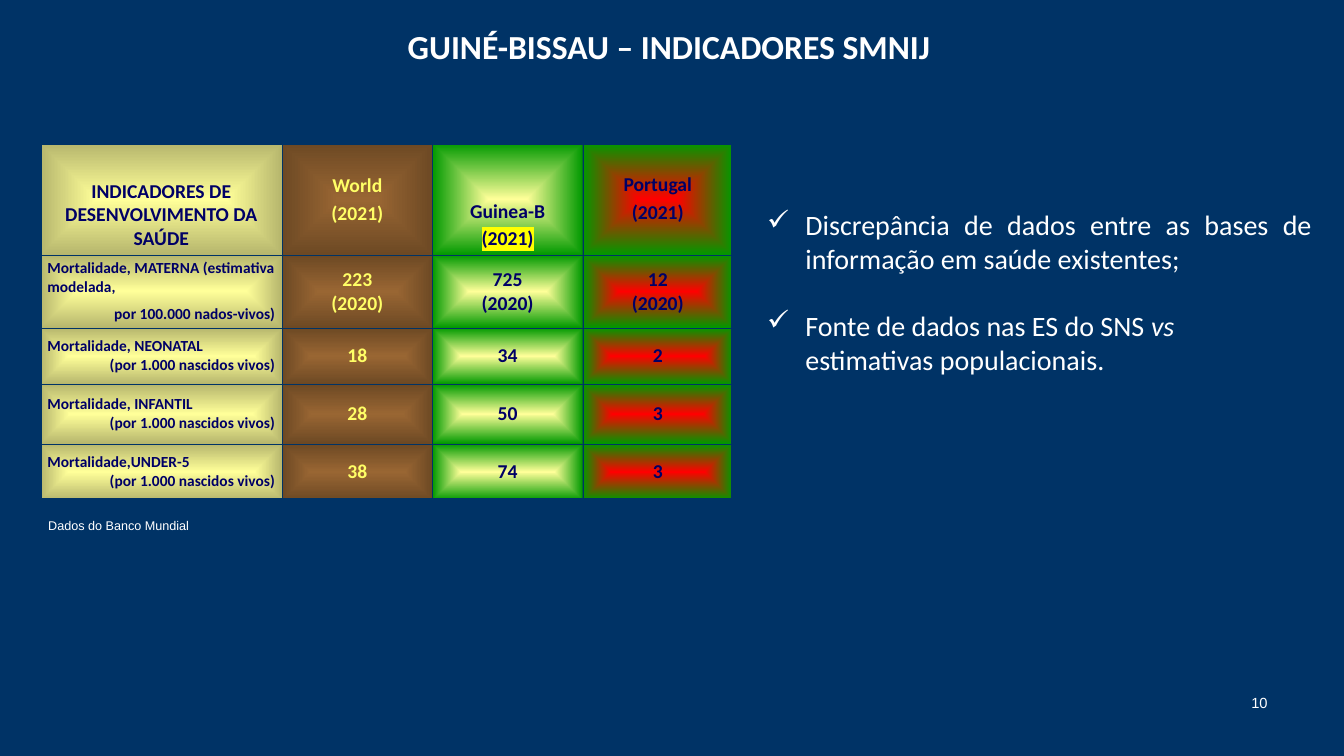
from dataclasses import dataclass

import pptx
import pptx.dml.color
import pptx.enum.text
import pptx.oxml
import pptx.oxml.ns
import pptx.util
from pptx.util import Inches

ALIGN = pptx.enum.text.PP_ALIGN
ANCHOR = pptx.enum.text.MSO_ANCHOR
NAMESPACE = pptx.oxml.ns.nsdecls("a")


@dataclass(frozen=True)
class Theme:
    background: str = "003366"
    white: str = "FFFFFF"
    navy: str = "000066"
    pale_yellow: str = "FFFF66"
    highlight: str = "FFFF00"
    body_font: str = "Calibri"
    small_font: str = "Arial"
    title_size: float = 24
    bullet_size: float = 20
    value_size: float = 14
    label_size: float = 11
    number_size: float = 10.5
    caption_size: float = 9
    outer_border: float = 3
    inner_border: float = 0.25


THEME = Theme()


@dataclass(frozen=True)
class Line:
    text: str
    size: float
    color: str = THEME.white
    font: str = THEME.body_font
    bold: bool = False
    align: ALIGN = ALIGN.LEFT
    before: float = 0
    highlight: str = ""
    bullet: str = ""
    italic_word: str = ""
    ending: str = ""


@dataclass(frozen=True)
class TextBox:
    left: float
    top: float
    width: float
    height: float
    lines: tuple[Line, ...]
    margin_top: float = 0.05


@dataclass(frozen=True)
class Column:
    width: float
    center: str
    edge: str
    text: str
    header: tuple[str, ...]
    anchor: ANCHOR = ANCHOR.BOTTOM
    margin_bottom: float = 0.04
    highlight: str = ""


@dataclass(frozen=True)
class Indicator:
    height: float
    name: str
    unit: str
    values: tuple[str, ...]
    year: str = ""
    unit_gap: float = 0


COLUMNS = (
    Column(2.4, "FFFF99", "B6B66D", THEME.navy, ("INDICADORES DE DESENVOLVIMENTO DA SAÚDE",)),
    Column(1.49, "996633", "6D4924", THEME.pale_yellow, ("World", "(2021)"), margin_bottom=0.29),
    Column(1.49, "FFFF99", "009900", THEME.navy, ("Guinea-B", "(2021)"), highlight=THEME.highlight),
    Column(1.49, "FF0000", "009900", THEME.navy, ("Portugal", "(2021)"), ANCHOR.MIDDLE),
)
HEADER_HEIGHT = 1.11
BIRTHS = "(por 1.000 nascidos vivos)"
INDICATORS = (
    Indicator(0.72, "Mortalidade, MATERNA (estimativa modelada,", "por 100.000 nados-vivos)",
              ("223", "725", "12"), "(2020)", 5.5),
    Indicator(0.56, "Mortalidade, NEONATAL", BIRTHS, ("18", "34", "2")),
    Indicator(0.59, "Mortalidade, INFANTIL", BIRTHS, ("28", "50", "3")),
    Indicator(0.56, "Mortalidade,UNDER-5", BIRTHS, ("38", "74", "3")),
)
TEXT_BOXES = (
    TextBox(0.16, 0.21, 12.95, 0.5, (
        Line("GUINÉ-BISSAU – INDICADORES SMNIJ", THEME.title_size, bold=True, align=ALIGN.CENTER),)),
    TextBox(7.51, 1.68, 5.6, 2.12, (
        Line("Discrepância de dados entre as bases de informação em saúde existentes;",
             THEME.bullet_size, align=ALIGN.JUSTIFY, bullet="✓"),
        Line("Fonte de dados nas ES do SNS ", THEME.bullet_size, before=24, bullet="✓",
             italic_word="vs", ending="\vestimativas populacionais.")), 0.38),
    TextBox(0.38, 5.09, 1.7, 0.25, (
        Line("Dados do Banco Mundial", THEME.caption_size, font=THEME.small_font),)),
    TextBox(9.56, 6.83, 3.11, 0.52, (
        Line("10", THEME.number_size, font=THEME.small_font, align=ALIGN.RIGHT),)),
)


def rgb(color: str) -> pptx.dml.color.RGBColor:
    return pptx.dml.color.RGBColor.from_string(color)


def element(markup: str):
    name = markup[1:].split(" ")[0].split(">")[0].split("/")[0]
    return pptx.oxml.parse_xml(markup.replace(f"<{name}", f"<{name} {NAMESPACE}", 1))


def write_line(paragraph, line: Line) -> None:
    paragraph.alignment = line.align
    paragraph.space_before = pptx.util.Pt(line.before)
    if line.bullet:
        properties = paragraph._p.get_or_add_pPr()
        properties.set("marL", str(Inches(0.38)))
        properties.set("indent", str(-Inches(0.38)))
        properties.append(element(f'<a:buChar char="{line.bullet}"/>'))
    paragraph.font.size = pptx.util.Pt(line.size)
    paragraph.font.name = line.font
    paragraph.font.bold = line.bold
    paragraph.font.color.rgb = rgb(line.color)
    run = paragraph.add_run()
    run.text = line.text
    if line.highlight:
        run._r.get_or_add_rPr().append(
            element(f'<a:highlight><a:srgbClr val="{line.highlight}"/></a:highlight>'))
    if line.italic_word:
        italic_run = paragraph.add_run()
        italic_run.text = line.italic_word
        italic_run.font.italic = True
    for index, piece in enumerate(line.ending.split("\v")):
        if index:
            paragraph.add_line_break()
        if piece:
            paragraph.add_run().text = piece


def write_lines(text_frame, lines: tuple[Line, ...]) -> None:
    for index, line in enumerate(lines):
        write_line(text_frame.add_paragraph() if index else text_frame.paragraphs[0], line)


def draw_text_box(slide, box: TextBox) -> None:
    shape = slide.shapes.add_textbox(
        Inches(box.left), Inches(box.top), Inches(box.width), Inches(box.height))
    shape.text_frame.word_wrap = True
    shape.text_frame.margin_top = Inches(box.margin_top)
    write_lines(shape.text_frame, box.lines)


def header_lines(column: Column) -> tuple[Line, ...]:
    return tuple(
        Line(text, THEME.value_size, column.text, bold=True, align=ALIGN.CENTER,
             before=2.8 if index else 0, highlight=column.highlight if index else "")
        for index, text in enumerate(column.header))


def indicator_lines(indicator: Indicator, column_index: int) -> tuple[Line, ...]:
    color = COLUMNS[column_index].text
    if column_index == 0:
        return (Line(indicator.name, THEME.label_size, color, bold=True),
                Line(indicator.unit, THEME.label_size, color, bold=True,
                     align=ALIGN.RIGHT, before=indicator.unit_gap))
    texts = (indicator.values[column_index - 1], indicator.year)
    return tuple(Line(text, THEME.value_size, color, bold=True, align=ALIGN.CENTER)
                 for text in texts if text)


def style_cell(cell, column: Column, outer_sides: dict[str, bool]) -> None:
    cell.margin_left = cell.margin_right = Inches(0.07)
    cell.margin_top = cell.margin_bottom = Inches(0.04)
    properties = cell._tc.get_or_add_tcPr()
    for side, is_outer in outer_sides.items():
        width = pptx.util.Pt(THEME.outer_border if is_outer else THEME.inner_border)
        properties.append(element(
            f'<a:ln{side} w="{width}"><a:solidFill><a:srgbClr val="{THEME.background}"/>'
            f'</a:solidFill></a:ln{side}>'))
    properties.append(element(
        f'<a:gradFill rotWithShape="0"><a:gsLst><a:gs pos="0"><a:srgbClr val="{column.center}"/></a:gs>'
        f'<a:gs pos="100000"><a:srgbClr val="{column.edge}"/></a:gs></a:gsLst><a:path path="shape">'
        '<a:fillToRect l="50000" t="50000" r="50000" b="50000"/></a:path></a:gradFill>'))


def draw_table(slide) -> None:
    heights = (HEADER_HEIGHT, *(indicator.height for indicator in INDICATORS))
    table = slide.shapes.add_table(
        len(heights), len(COLUMNS), Inches(0.4), Inches(1.42),
        Inches(sum(column.width for column in COLUMNS)), Inches(sum(heights))).table
    table.first_row = table.horz_banding = False
    for row_index, height in enumerate(heights):
        table.rows[row_index].height = Inches(height)
        for column_index, column in enumerate(COLUMNS):
            table.columns[column_index].width = Inches(column.width)
            cell = table.cell(row_index, column_index)
            style_cell(cell, column, {
                "L": column_index == 0, "R": column_index == len(COLUMNS) - 1,
                "T": row_index == 0, "B": row_index == len(heights) - 1})
            if row_index == 0:
                cell.vertical_anchor = column.anchor
                cell.margin_bottom = Inches(column.margin_bottom)
                write_lines(cell.text_frame, header_lines(column))
            else:
                cell.vertical_anchor = ANCHOR.MIDDLE
                write_lines(cell.text_frame, indicator_lines(INDICATORS[row_index - 1], column_index))


def main() -> None:
    presentation = pptx.Presentation()
    presentation.slide_width, presentation.slide_height = Inches(13.33), Inches(7.5)
    slide = presentation.slides.add_slide(presentation.slide_layouts[6])
    slide.background.fill.solid()
    slide.background.fill.fore_color.rgb = rgb(THEME.background)
    draw_table(slide)
    for box in TEXT_BOXES:
        draw_text_box(slide, box)
    presentation.save("out.pptx")


if __name__ == "__main__":
    main()
